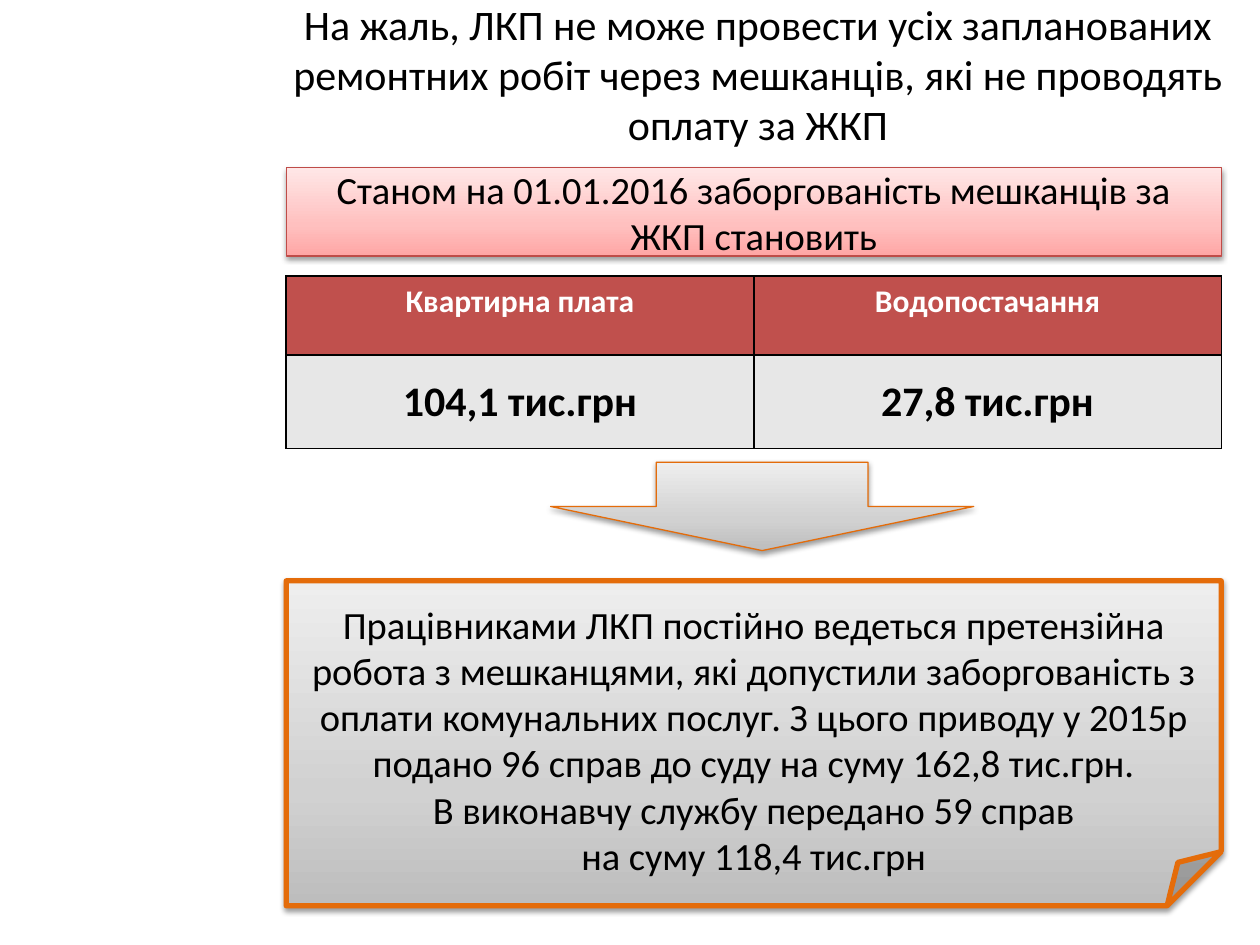
from lxml import etree
from pptx import Presentation
from pptx.dml.color import RGBColor
from pptx.enum.shapes import MSO_SHAPE as SHAPE
from pptx.enum.text import MSO_ANCHOR as ANCHOR, PP_ALIGN as ALIGN
from pptx.oxml import parse_xml
from pptx.oxml.ns import nsdecls, qn
from pptx.util import Cm, Pt

LEFT, WIDTH = 5.77, 18.85
PINK = [(0, "FFA6A5"), (35, "FFC0BF"), (100, "FFE7E7")]
GREY = [(0, "BDBDBD"), (35, "D1D1D1"), (100, "EEEEEE")]
ORANGE = "E46C0A"


def write(tf, lines, size, color="000000", bold=False, anchor=ANCHOR.MIDDLE):
    """Fill a text frame with centred paragraphs, one per line."""
    tf.word_wrap = True
    tf.vertical_anchor = anchor
    for i, line in enumerate(lines):
        p = tf.paragraphs[0] if i == 0 else tf.add_paragraph()
        p.alignment = ALIGN.CENTER
        r = p.add_run()
        r.text = line
        r.font.name = "Calibri"
        r.font.size = Pt(size)
        r.font.bold = bold
        r.font.color.rgb = RGBColor.from_string(color)


def add_panel(kind, x, y, w, h, stops, line, line_width):
    """Add a shape with a vertical gradient and a soft shadow below it."""
    s = slide.shapes.add_shape(kind, Cm(x), Cm(y), Cm(w), Cm(h))
    s.fill.gradient()
    s.fill.gradient_angle = 90
    gs_list = s._element.spPr.find(".//" + qn("a:gsLst"))
    for gs in list(gs_list):
        gs_list.remove(gs)
    for pos, color in stops:
        gs_list.append(parse_xml(
            f'<a:gs {nsdecls("a")} pos="{pos * 1000}"><a:srgbClr val="{color}"/></a:gs>'))
    s.line.color.rgb = RGBColor.from_string(line)
    s.line.width = Pt(line_width)
    s.shadow.inherit = False
    s._element.spPr.find(qn("a:effectLst")).append(parse_xml(
        f'<a:outerShdw {nsdecls("a")} blurRad="40000" dist="20000" dir="5400000" '
        'rotWithShape="0"><a:srgbClr val="000000"><a:alpha val="38000"/>'
        '</a:srgbClr></a:outerShdw>'))
    return s


prs = Presentation()
prs.slide_width, prs.slide_height = Cm(25.4), Cm(19.05)
slide = prs.slides.add_slide(prs.slide_layouts[5])

# Title
title = slide.shapes.title
title.left, title.top, title.width, title.height = Cm(5.16), Cm(0), Cm(20.24), Cm(2.97)
write(title.text_frame, ["На жаль, ЛКП не може провести усіх запланованих ремонтних "
                         "робіт через мешканців, які не проводять оплату за ЖКП"], 24)

# Debt table
rows = [
    (["Квартирна плата", "Водопостачання"], 1.6, 18, "FFFFFF", "C0504D", ANCHOR.TOP),
    (["104,1 тис.грн", "27,8 тис.грн"], 1.88, 24, "000000", "E7E7E7", ANCHOR.MIDDLE),
]
table = slide.shapes.add_table(2, 2, Cm(LEFT), Cm(5.56), Cm(WIDTH), Cm(3.48)).table
for i, (texts, height, size, color, fill, anchor) in enumerate(rows):
    table.rows[i].height = Cm(height)
    for j, text in enumerate(texts):
        cell = table.cell(i, j)
        write(cell.text_frame, [text], size, color, True)
        cell.vertical_anchor = anchor
        cell.fill.solid()
        cell.fill.fore_color.rgb = RGBColor.from_string(fill)
        tcPr = cell._tc.get_or_add_tcPr()
        for k, side in enumerate(["lnL", "lnR", "lnT", "lnB"]):
            ln = etree.Element(qn("a:" + side), w=str(Pt(1)))
            solid = etree.SubElement(ln, qn("a:solidFill"))
            etree.SubElement(solid, qn("a:srgbClr"), val="000000")
            tcPr.insert(k, ln)

# Heading band, arrow and note
band = add_panel(SHAPE.RECTANGLE, LEFT, 3.38, WIDTH, 1.78, PINK, "BF4C48", 0.75)
write(band.text_frame, ["Станом на 01.01.2016 заборгованість мешканців за ЖКП становить"], 22)

add_panel(SHAPE.DOWN_ARROW, 11.1, 9.32, 8.53, 1.78, GREY, ORANGE, 0.75)

note = add_panel(SHAPE.FOLDED_CORNER, LEFT, 11.71, WIDTH, 6.55, GREY, ORANGE, 3)
note.text_frame.margin_top = Cm(1.06)
write(note.text_frame, [
    "Працівниками ЛКП постійно ведеться претензійна робота з мешканцями, які "
    "допустили заборгованість з оплати комунальних послуг. З цього приводу у 2015р "
    "подано 96 справ до суду на суму 162,8 тис.грн.",
    "В виконавчу службу передано 59 справ",
    "на суму 118,4 тис.грн",
], 22)

prs.save("out.pptx")
